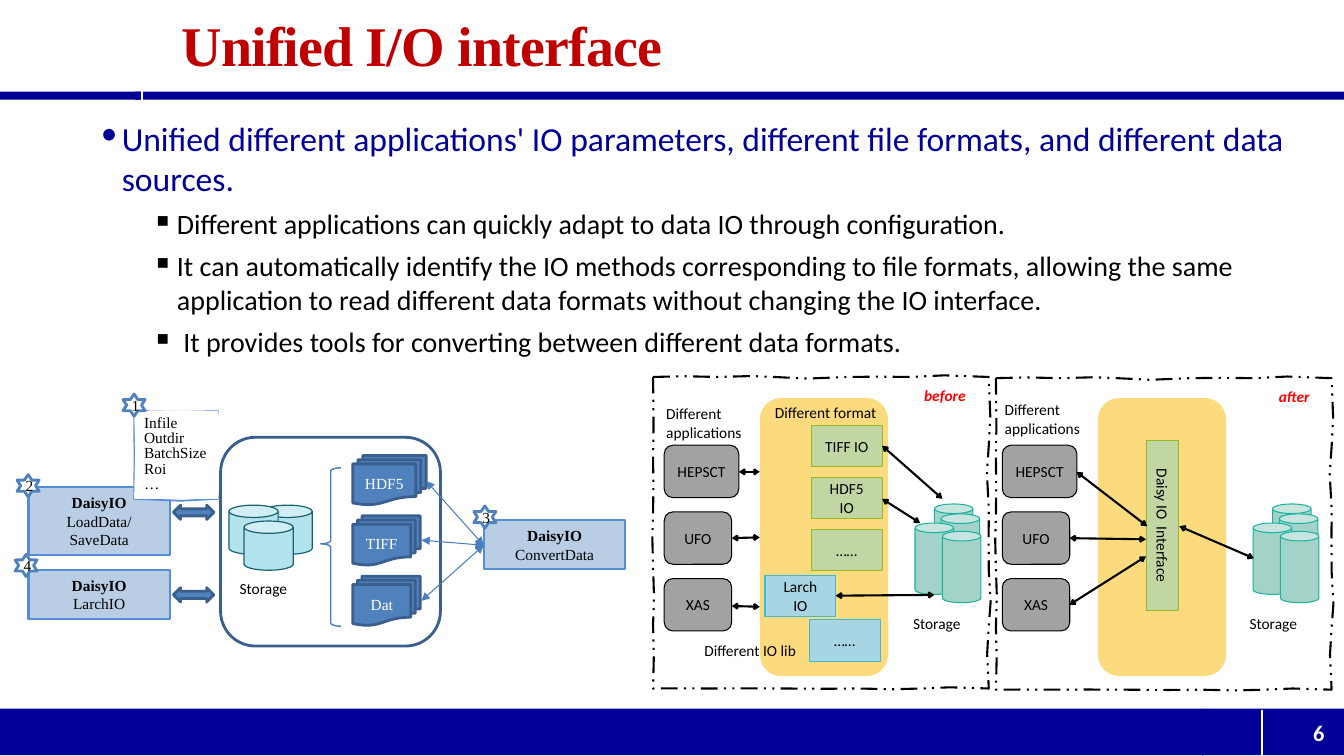
from lxml import etree
from pptx import Presentation
from pptx.dml.color import RGBColor
from pptx.enum import dml, shapes, text
from pptx.oxml.ns import qn
from pptx.util import Cm, Pt

COLORS = dict(navy="000099", white="FFFFFF", black="000000", title="C00000", red="FF0000",
              band="FAB900", gray="A2A2A2", teal="A2D2C8", teal_edge="1AB39F",
              green="C1D6A3", green_edge="90BB23", sky="A7D5E3", sky_edge="40BAD2",
              aqua="B3E3ED", aqua_edge="1A616F", blue="4F81BD", blue_edge="3A5F8C",
              pale="B9CDE5", pale_edge="558ED5", link="4B7EBC")
SERIF = "Times New Roman"

TITLE = "Unified I/O interface"
# text, Wingdings bullet, size, colour, left margin, hanging indent
BULLETS = [
    ("Unified different applications' IO parameters, different file formats, "
     "and different data sources.", "l", 24, "navy", 0.51, 0.51),
    ("Different applications can quickly adapt to data IO through configuration.",
     "n", 20, "black", 1.9, 0.51),
    ("It can automatically identify the IO methods corresponding to file formats, allowing the "
     "same application to read different data formats without changing the IO interface.",
     "n", 20, "black", 1.9, 0.51),
    ("It provides tools for converting between different data formats.",
     "n", 20, "black", 2.06, 0.67),
]
BARS = [(3.4, 2.31, 30.47, 0.2), (0, 2.31, 3.58, 0.2),
        (0, 17.86, 30.33, 1.17), (30.3, 17.86, 3.57, 1.17)]
BAR_TICKS = [(3.58, 2.51, 3.58, 2.29), (31.8, 17.88, 31.8, 19.05)]
CORNER = (30.3, 17.88, 1.47, 1.17)

APPS = [("HEPSCT", 1.88), ("UFO", 1.7), ("XAS", 1.7)]
PANEL_CANS = [(23.55, 12.7), (23.72, 12.95), (23.06, 13.18), (23.75, 13.39)]
PANEL_SHIFTS = [0, 8.52]
FORMAT_BOXES = ["TIFF IO", "HDF5 IO", "……"]
LIB_BOXES = [("Larch IO", 19.28, 14.5), ("……", 20.4, 15.62)]
PANEL_ARROWS = [
    (18.62, 11.89, 19.15, 11.89), (18.44, 13.56, 19.15, 13.54), (18.44, 15.27, 19.15, 15.29),
    (22.23, 11.23, 23.75, 12.57), (22.23, 12.57, 23.19, 13.18), (21.06, 15.01, 23.55, 14.99),
    (27.13, 11.89, 28.91, 13.26), (26.95, 13.56, 28.88, 13.59), (26.95, 15.24, 28.88, 14.02),
    (29.72, 13.26, 31.6, 14.07),
]
LABELS = [("Different format", 19.28, 10.03, 3.45), ("Different IO lib", 17.5, 16.03, 2.84),
          ("Storage", 22.76, 15.34, 1.85), ("Storage", 31.24, 15.34, 1.88),
          ("Different applications", 16.54, 10.06, 2.46),
          ("Different applications", 25.07, 9.96, 2.46), ("Storage", 5.79, 14.48, 2.31)]
STATES = [("before", 23.04, 9.6), ("after", 31.98, 9.63)]
FRAME_CORNERS = [(16.46, 9.5), (25.1, 9.53)]
# Bezier segments from the top-left corner: two controls and an end point
FRAME = [
    (0.56, -0.08, 0.91, 0.03, 1.63, 0), (2.31, -0.03, 2.72, -0.03, 3.05, 0),
    (3.38, 0.03, 4.34, 0.08, 4.9, 0), (5.46, -0.1, 5.97, 0.08, 6.5, 0),
    (7.06, -0.08, 7.52, -0.03, 8.46, 0), (8.51, 0.69, 8.51, 1.37, 8.46, 1.73),
    (8.41, 2.08, 8.38, 2.67, 8.46, 3.3), (8.53, 3.91, 8.38, 4.19, 8.46, 4.88),
    (8.53, 5.54, 8.51, 5.89, 8.46, 6.27), (8.38, 6.65, 8.43, 7.24, 8.46, 7.85),
    (7.72, 7.77, 7.14, 7.85, 6.76, 7.85), (6.4, 7.85, 5.74, 7.9, 5.16, 7.85),
    (4.6, 7.8, 4.22, 7.92, 3.3, 7.85), (2.39, 7.77, 2.11, 7.92, 1.45, 7.85),
    (0.79, 7.77, 0.53, 7.92, 0, 7.85), (0.05, 7.34, 0, 6.73, 0, 6.27),
    (0.03, 5.84, 0.03, 5.16, 0, 4.78), (0, 4.42, -0.05, 3.73, 0, 3.45),
    (0.05, 3.15, -0.03, 2.34, 0, 2.03), (0.03, 1.75, 0, 0.84, 0, 0),
]
NOTE_EDGE = [(0.69, -0.03, 1.6, 0.08, 2.11, 0), (1.98, 0.71, 1.93, 1.24, 2.11, 2.21),
             (1.4, 2.26, 1.04, 2.29, 0, 2.21), (0.08, 1.6, -0.05, 0.79, 0, 0)]
NOTE_PAPER = [(0.48, 0.03, 1.57, -0.05, 2.11, 0), (2.26, 0.64, 2.18, 1.17, 2.11, 2.21),
              (1.83, 2.08, 0.91, 2.36, 0, 2.21), (-0.03, 1.37, 0.1, 0.48, 0, 0)]
NOTE = ["Infile", "Outdir", "BatchSize", "Roi", "…"]
NOTE_CORNER = (3.38, 10.36)

SERVICES = [(["DaisyIO", "LoadData/", "SaveData"], 0.72, 12.28, 1.7),
            (["DaisyIO", "ConvertData"], 12.2, 13.11, 1.24),
            (["DaisyIO", "LarchIO"], 0.72, 14.36, 1.24)]
STORAGE_CANS = [(6.63, 12.73), (5.77, 12.73), (6.15, 13.13)]
FILES = [("HDF5", 1.85), ("TIFF", 1.7), ("Dat", 1.7)]
FILE_LINKS = [(10.74, 12.12), (10.62, 13.61), (10.62, 15.14)]
CONVERT_POINT = (12.19, 13.74)
STEPS = [(3.1, 9.93), (0.43, 11.96), (11.94, 12.75), (0.38, 13.97)]

prs = Presentation()
prs.slide_width, prs.slide_height = Cm(33.87), Cm(19.05)
slide = prs.slides.add_slide(prs.slide_layouts[5])
KIND = shapes.MSO_SHAPE


def rgb(name):
    return RGBColor.from_string(COLORS[name])


def style(part, fill=None, edge=None, width=0.75):
    part.shadow.inherit = False
    if fill:
        part.fill.solid()
        part.fill.fore_color.rgb = rgb(fill)
    else:
        part.fill.background()
    if edge:
        part.line.color.rgb = rgb(edge)
        part.line.width = Pt(width)
    else:
        part.line.fill.background()
    return part


def write(part, lines, font="Calibri", size=11, color="black", align="CENTER", anchor="MIDDLE"):
    frame = part.text_frame
    frame.word_wrap = True
    frame.vertical_anchor = getattr(text.MSO_ANCHOR, anchor)
    for i, line in enumerate(lines):
        para = frame.paragraphs[0] if i == 0 else frame.add_paragraph()
        para.text = line
        para.alignment = getattr(text.PP_ALIGN, align)
        para.font.name, para.font.size, para.font.color.rgb = font, Pt(size), rgb(color)
    return frame.paragraphs


def box(kind, x, y, w, h, fill=None, edge=None, width=0.75):
    part = slide.shapes.add_shape(kind, Cm(x), Cm(y), Cm(w), Cm(h))
    return style(part, fill, edge, width)


def label(words, x, y, w, h=0.74, **look):
    part = slide.shapes.add_textbox(Cm(x), Cm(y), Cm(w), Cm(h))
    return write(part, [words], **{"align": "LEFT", "anchor": "TOP", **look})[0]


def line(x1, y1, x2, y2, color, width, head=None, head_size="med"):
    part = slide.shapes.add_connector(shapes.MSO_CONNECTOR.STRAIGHT,
                                      Cm(x1), Cm(y1), Cm(x2), Cm(y2))
    part.line.color.rgb, part.line.width = rgb(color), Pt(width)
    if head:
        for end in ("a:headEnd", "a:tailEnd"):
            etree.SubElement(part.line._get_or_add_ln(), qn(end),
                             type=head, w=head_size, len=head_size)
    etree.SubElement(part._element.spPr, qn("a:effectLst"))


def curved(corner, segments, steps=2):
    """Closed outline through sampled Bezier segments."""
    points, (px, py) = [], (0, 0)
    for ax, ay, bx, by, ex, ey in segments:
        for t in (i / steps for i in range(1, steps + 1)):
            weights = ((1 - t) ** 3, 3 * t * (1 - t) ** 2, 3 * t * t * (1 - t), t ** 3)
            points.append(tuple(Cm(base + sum(w * v for w, v in zip(weights, values)))
                                for base, values in zip(corner, ((px, ax, bx, ex),
                                                                 (py, ay, by, ey)))))
        px, py = ex, ey
    builder = slide.shapes.build_freeform(Cm(corner[0]), Cm(corner[1]))
    builder.add_line_segments(points[:-1], close=True)
    return builder.convert_to_shape()


# Header, footer and text
for bar in BARS:
    box(KIND.RECTANGLE, *bar, "navy")
label("6", 28.65, 17.88, 4.98, 1.17, size=16, color="white", align="RIGHT",
      anchor="MIDDLE").font.bold = True
wedge = box(KIND.RIGHT_TRIANGLE, *CORNER, "navy")
wedge._element.spPr.find(qn("a:xfrm")).set("flipV", "1")
for tick in BAR_TICKS:
    line(*tick, "white", 1.5)

title = slide.shapes.title
title.left, title.top, title.width, title.height = Cm(4.32), Cm(0.3), Cm(29.21), Cm(1.85)
heading = write(title, [TITLE], SERIF, 40, "title", "LEFT")[0]
heading.font.bold = True
heading.line_spacing = 0.9
heading.runs[0].font._element.set("spc", "-60")

body = slide.shapes.add_textbox(Cm(2.31), Cm(2.84), Cm(31.57), Cm(13.34)).text_frame
body.word_wrap = True
for i, (words, mark, size, color, margin, hang) in enumerate(BULLETS):
    point = body.paragraphs[0] if i == 0 else body.add_paragraph()
    point.text = words
    if i:
        point.space_before = Pt(6)
    props = point._p.get_or_add_pPr()
    props.set("marL", str(Cm(margin)))
    props.set("indent", str(-Cm(hang)))
    etree.SubElement(props, qn("a:buSzPct"), val="60000")
    etree.SubElement(props, qn("a:buFont"), typeface="Wingdings", charset="2")
    etree.SubElement(props, qn("a:buChar"), char=mark)
    point.font.name, point.font.size, point.font.color.rgb = "Calibri", Pt(size), rgb(color)

# Before and after panels
for shift in PANEL_SHIFTS:
    band = box(KIND.ROUNDED_RECTANGLE, 19.15 + shift, 10.03, 3.23, 7.01, "band")
    tint = band._element.spPr.find(qn("a:solidFill"))[0]
    etree.SubElement(tint, qn("a:alpha"), val="50000")
    for row, (app, w) in enumerate(APPS):
        write(box(KIND.ROUNDED_RECTANGLE, 16.74 + shift, 11.22 + 1.68 * row, w, 1.32,
                  "gray", "black"), [app])
    for x, y in PANEL_CANS:
        box(KIND.CAN, x + shift, y, 0.97, 1.8, "teal", "teal_edge")
for row, name in enumerate(FORMAT_BOXES):
    write(box(KIND.RECTANGLE, 20.45, 10.72 + 1.31 * row, 1.78, 1.04, "green", "green_edge"), [name])
for name, x, y in LIB_BOXES:
    write(box(KIND.RECTANGLE, x, y, 1.78, 1.04, "sky", "sky_edge"), [name])
interface = box(KIND.RECTANGLE, 28.9, 11.1, 0.81, 4.29, "green", "green_edge")
write(interface, ["Daisy IO  Interface"])
interface.text_frame._txBody.bodyPr.set("vert", "vert")
for arrow in PANEL_ARROWS:
    line(*arrow, "black", 1.5, "arrow", "sm")
for corner in FRAME_CORNERS:
    style(curved(corner, FRAME), None, "black", 1.5).line.dash_style = dml.MSO_LINE.DASH_DOT_DOT
for state, x, y in STATES:
    mark = label(state, x, y, 1.91, color="red")
    mark.font.bold = mark.font.italic = True

# Storage workflow
for x, y in STORAGE_CANS:
    box(KIND.CAN, x, y, 1.24, 1.24, "aqua", "aqua_edge", 0.85)
for row, (name, w) in enumerate(FILES):
    write(box(KIND.FLOWCHART_MULTIDOCUMENT, 8.89, 11.48 + 1.52 * row, w, 1.24,
              "blue", "blue_edge", 2), [name], SERIF, color="white")
for lines, x, y, h in SERVICES:
    service = box(KIND.RECTANGLE, x, y, 3.56, h, "pale", "pale_edge", 1.5)
    write(service, lines, SERIF)[0].font.bold = True
style(curved(NOTE_CORNER, NOTE_EDGE), None, "pale_edge", 1.25)
paper = style(curved(NOTE_CORNER, NOTE_PAPER), "white")
for para in write(paper, NOTE, SERIF, align="LEFT", anchor="TOP"):
    para.line_spacing = Pt(11)
box(KIND.ROUNDED_RECTANGLE, 5.56, 11.02, 5.54, 5.26, None, "blue_edge", 2)
for start in FILE_LINKS:
    line(*start, *CONVERT_POINT, "link", 0.75, "triangle")
brace = box(KIND.LEFT_BRACE, 8.08, 11.79, 0.51, 3.99, None, "link", 1)
brace.adjustments[0], brace.adjustments[1] = 0.15, 0.48
for y in (12.73, 14.81):
    box(KIND.LEFT_RIGHT_ARROW, 4.37, y, 1.02, 0.36, "blue", "blue_edge", 2)
for number, (x, y) in enumerate(STEPS, 1):
    write(box(KIND.STAR_6_POINT, x, y, 0.56, 0.56, "white", "blue", 2), [str(number)], SERIF)
for words, x, y, w in LABELS:
    label(words, x, y, w, 1.19 if words.endswith("applications") else 0.74)

prs.save("out.pptx")
